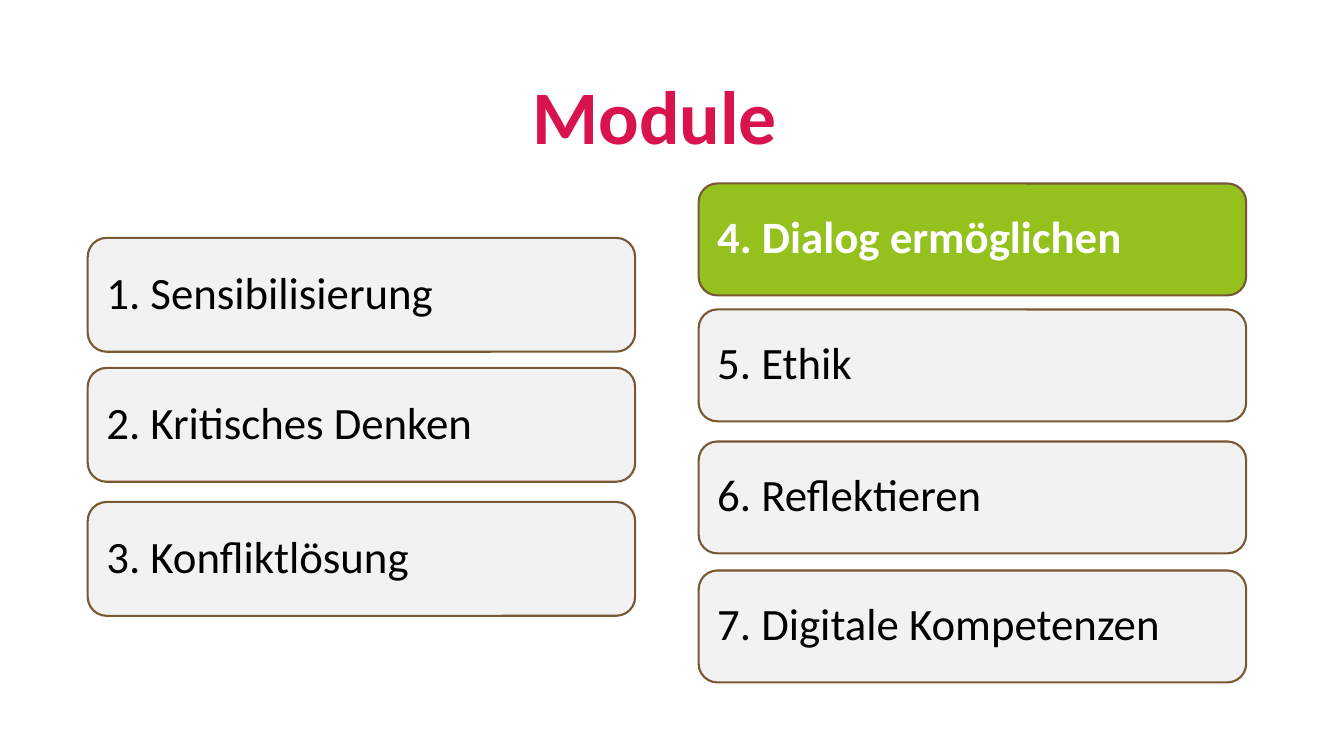
"""Build the module overview slide with two columns of boxes."""
from pptx import Presentation
from pptx.dml.color import RGBColor
from pptx.enum.shapes import MSO_SHAPE
from pptx.enum.text import MSO_ANCHOR, PP_ALIGN
from pptx.util import Inches, Pt

ROUND = MSO_SHAPE.ROUNDED_RECTANGLE
MIDDLE, BOTTOM = MSO_ANCHOR.MIDDLE, MSO_ANCHOR.BOTTOM
LEFT, CENTER = PP_ALIGN.LEFT, PP_ALIGN.CENTER
COLORS = {"title": "D8134D", "box": "F2F2F2", "active": "95C11F",
          "line": "785832", "text": "000000", "light": "FFFFFF"}
ACTIVE = 4


def color(name):
    return RGBColor.from_string(COLORS[name])


def write(frame, text, size, tint, bold, align, anchor):
    frame.word_wrap = True
    frame.vertical_anchor = anchor
    para = frame.paragraphs[0]
    para.alignment = align
    para.line_spacing = 0.9
    run = para.add_run()
    run.text = text
    run.font.name = "Calibri"
    run.font.size = Pt(size)
    run.font.bold = bold
    run.font.color.rgb = color(tint)


deck = Presentation()
deck.slide_width, deck.slide_height = Inches(13.33), Inches(7.5)
slide = deck.slides.add_slide(deck.slide_layouts[5])

title = slide.shapes.title
title.left, title.top = Inches(0.01), Inches(-0.3)
title.width, title.height = Inches(12.97), Inches(1.95)
write(title.text_frame, "Module", 54, "title", True, CENTER, BOTTOM)

columns = [
    (0.87, 1.13, [(2.36, "Sensibilisierung"), (3.65, "Kritisches Denken"),
                  (4.98, "Konfliktlösung")]),
    (6.93, 1.11, [(1.82, "Dialog ermöglichen"), (3.07, "Ethik"),
                  (4.38, "Reflektieren"), (5.66, "Digitale Kompetenzen")]),
]
number = 0
for left, height, modules in columns:
    for top, name in modules:
        number += 1
        active = number == ACTIVE
        box = slide.shapes.add_shape(ROUND, Inches(left), Inches(top),
                                     Inches(5.43), Inches(height))
        box.shadow.inherit = False
        box.fill.solid()
        box.fill.fore_color.rgb = color("active" if active else "box")
        box.line.color.rgb = color("line")
        box.line.width = Pt(1.5)
        frame = box.text_frame
        frame.margin_left = frame.margin_right = Inches(0.13)
        frame.margin_top = frame.margin_bottom = Inches(0.13)
        write(frame, f"{number}. {name}", 32, "light" if active else "text",
              active, LEFT, MIDDLE)

deck.save("out.pptx")
